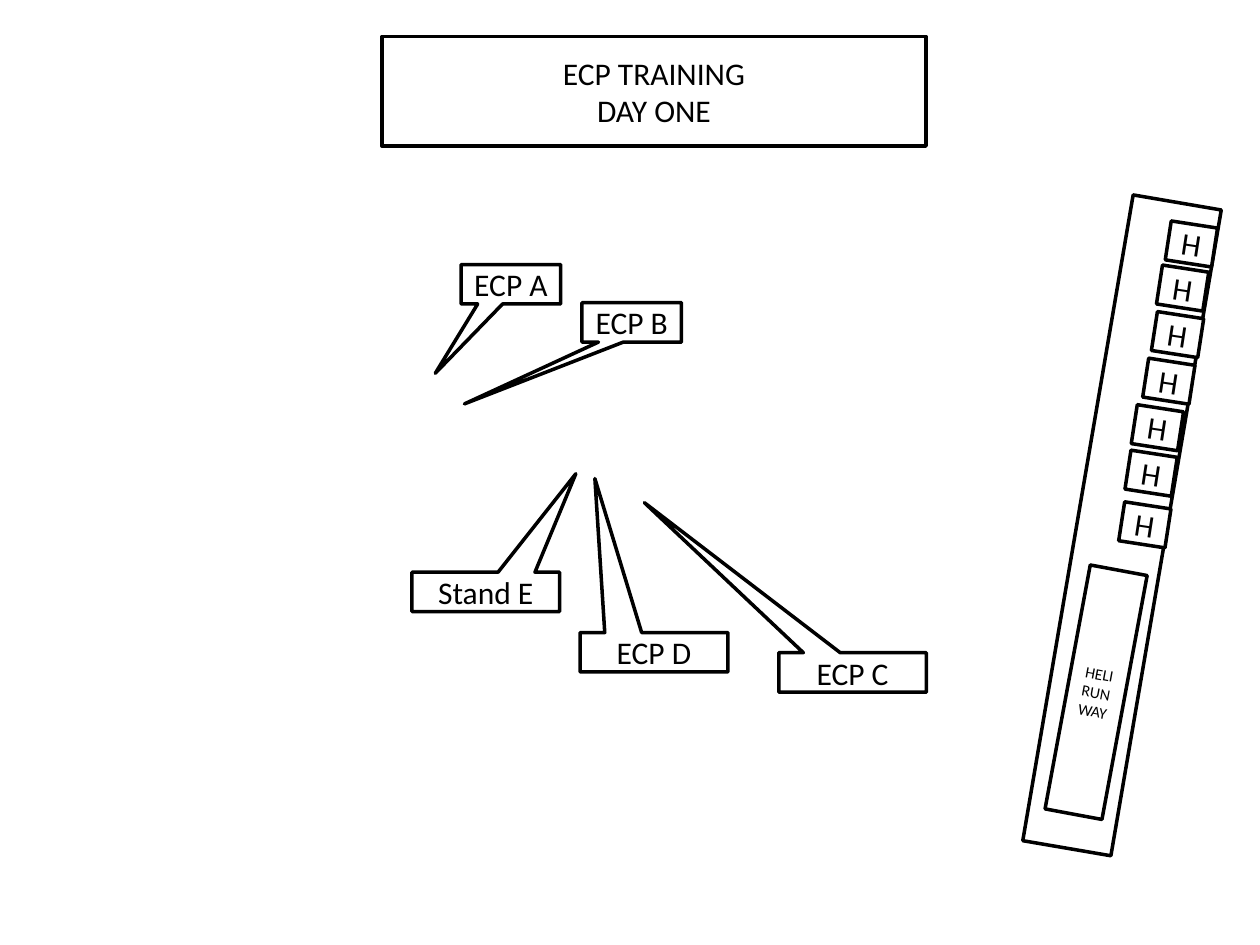
from pptx import Presentation
from pptx.dml.color import RGBColor
from pptx.enum.shapes import MSO_SHAPE
from pptx.enum.text import MSO_ANCHOR, MSO_AUTO_SIZE, PP_ALIGN
from pptx.util import Pt

COLORS = {"paper": "FFFFFF", "ink": "000000"}
FRAME_FORMAT = {
    "auto_size": MSO_AUTO_SIZE.NONE,
    "word_wrap": True,
    "vertical_anchor": MSO_ANCHOR.MIDDLE,
    "margin_left": Pt(4),
    "margin_right": Pt(4),
    "margin_top": 0,
    "margin_bottom": 0,
}
CALLOUTS = [
    ("ECP A", (263.5, 151.2, 56.9, 22.5), (-0.76, 2.26)),
    ("ECP B", (332.5, 173, 56.9, 22.5), (-1.68, 2.07)),
    ("Stand E", (235.4, 327, 84.4, 22.5), (0.61, -3)),
    ("ECP D", (331.5, 361.5, 84.4, 22.5), (-0.4, -4.41)),
    ("ECP C", (445, 373, 84.4, 22.5), (-1.41, -4.31)),
]
PAD_OFFSETS = [(51.8, 15.2), (46.8, 40.4), (43.9, 67), (38.9, 93.6),
               (32.4, 120.2), (28.8, 146.2), (25.2, 175.7)]


def format_box(shape, lines=(), size=18):
    """Give a shape the outlined style and centred lines of text."""
    shape.fill.solid()
    shape.fill.fore_color.rgb = RGBColor.from_string(COLORS["paper"])
    shape.line.color.rgb = RGBColor.from_string(COLORS["ink"])
    shape.line.width = Pt(2)
    frame = shape.text_frame
    for name, value in FRAME_FORMAT.items():
        setattr(frame, name, value)
    frame.text = "\n".join(lines)
    font_format = {"name": "Calibri", "size": Pt(size)}
    for paragraph in frame.paragraphs:
        paragraph.alignment = PP_ALIGN.CENTER
        for run in paragraph.runs:
            for name, value in font_format.items():
                setattr(run.font, name, value)
            run.font.color.rgb = RGBColor.from_string(COLORS["ink"])


def add_box(slide, box, lines=(), size=18, rotation=0, kind=MSO_SHAPE.RECTANGLE):
    """Add one outlined shape at a box given in points."""
    shape = slide.shapes.add_shape(kind, *map(Pt, box))
    shape.shadow.inherit = False
    shape.rotation = rotation
    format_box(shape, lines, size)
    return shape


def place_title(slide, box):
    """Place the boxed two-line title."""
    title = slide.shapes.title
    for name, value in zip(("left", "top", "width", "height"), box):
        setattr(title, name, Pt(value))
    format_box(title, ["ECP TRAINING", "DAY ONE"])


def add_callout(slide, box, label, pointer):
    """Add a labelled callout whose pointer is relative to its box."""
    callout = add_box(slide, box, [label], kind=MSO_SHAPE.RECTANGULAR_CALLOUT)
    for index, value in enumerate(pointer):
        callout.adjustments[index] = value


def add_airstrip(slide, box):
    """Add the tilted strip with its helicopter pads and runway."""
    left, top = box[:2]
    add_box(slide, box, rotation=9.7)
    for across, down in PAD_OFFSETS:
        add_box(slide, (left + across, top + down, 26.8, 22.5), ["H"], rotation=8.8)
    runway = (left - 5.8, top + 211.7, 33.1, 141.8)
    add_box(slide, runway, ["HELI", "RUN WAY"], size=9, rotation=10.5)


def main():
    """Build the training map and save it."""
    presentation = Presentation()
    presentation.slide_width, presentation.slide_height = Pt(720), Pt(540)
    slide = presentation.slides.add_slide(presentation.slide_layouts[5])
    place_title(slide, (218.2, 20.9, 311, 62.6))
    for label, box, pointer in CALLOUTS:
        add_callout(slide, box, label, pointer)
    add_airstrip(slide, (615.6, 113, 51.1, 374.4))
    presentation.save("out.pptx")


if __name__ == "__main__":
    main()
